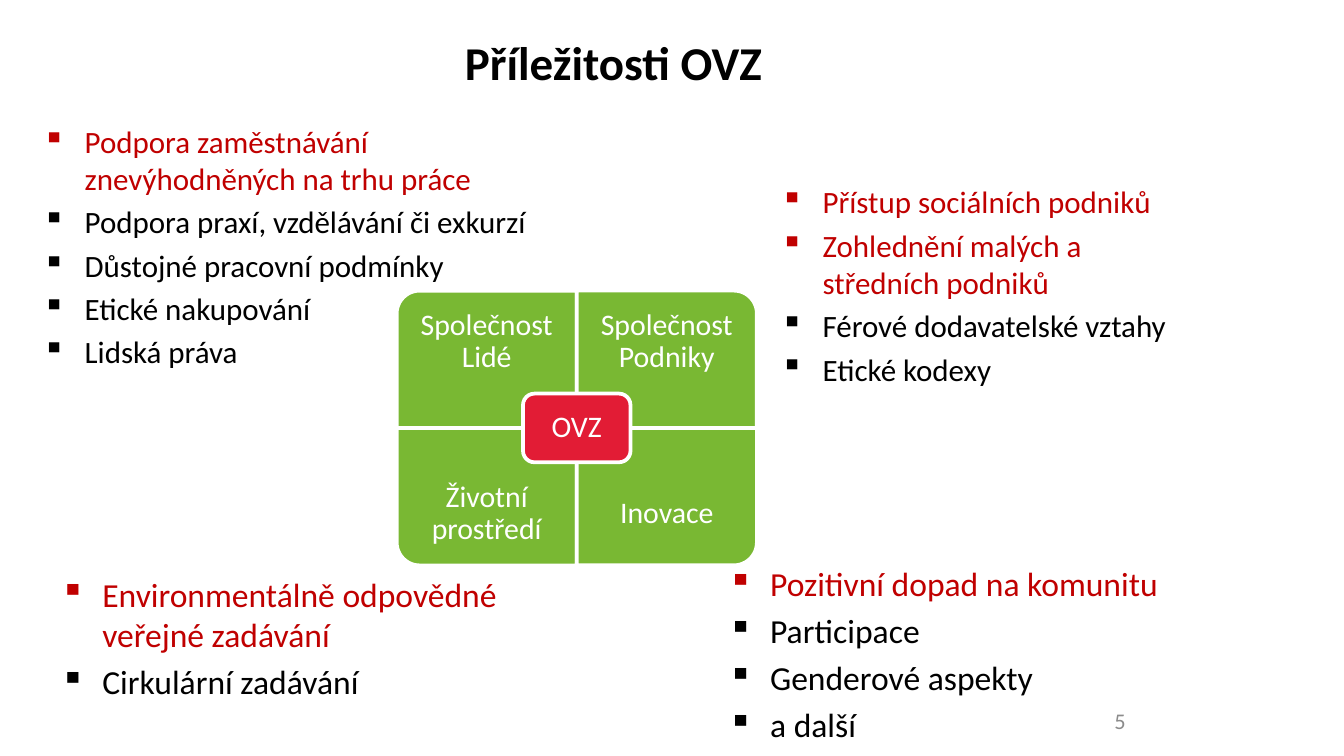
"""Build the slide on opportunities of responsible public procurement."""
import lxml.etree
import pptx
import pptx.dml.color
import pptx.enum.shapes
import pptx.enum.text
import pptx.oxml.ns
import pptx.util

Pt = pptx.util.Pt
RGB = pptx.dml.color.RGBColor
SHAPE = pptx.enum.shapes.MSO_SHAPE
ALIGN = pptx.enum.text.PP_ALIGN
ANCHOR = pptx.enum.text.MSO_ANCHOR

BLACK = RGB(0x00, 0x00, 0x00)
WHITE = RGB(0xFF, 0xFF, 0xFF)
GREY = RGB(0x8C, 0x8C, 0x8C)
DARK_RED = RGB(0xC0, 0x00, 0x00)
RED = RGB(0xE2, 0x1C, 0x35)
GREEN = RGB(0x79, 0xB8, 0x33)

CENTER_X, CENTER_Y = 309, 229.3
QUAD_W, QUAD_H = 96.5, 73.6
LABEL_H = 55.2
HUB_W, HUB_H = 57.6, 36.8

LISTS = [
    ((15.8, 61.9, 303.8, 153.4), 16.6, 1, [
        "Podpora zaměstnávání znevýhodněných na trhu práce",
        "Podpora praxí, vzdělávání či exkurzí",
        "Důstojné pracovní podmínky",
        "Etické nakupování",
        "Lidská práva"]),
    ((411.1, 94.3, 226.8, 147.6), 16.6, 2, [
        "Přístup sociálních podniků",
        "Zohlednění malých a středních podniků",
        "Férové dodavatelské vztahy",
        "Etické kodexy"]),
    ((25.2, 303.8, 295.9, 98.6), 18, 1, [
        "Environmentálně odpovědné veřejné zadávání",
        "Cirkulární zadávání"]),
    ((383, 298.1, 266.4, 98.6), 18, 1, [
        "Pozitivní dopad na komunitu",
        "Participace",
        "Genderové aspekty",
        "a další"]),
]

QUADRANTS = [
    ("Společnost Lidé", 0, 0, 270),
    ("Společnost Podniky", 1, 0, 0),
    ("Životní prostředí", 0, 1, 180),
    ("Inovace", 1, 1, 90),
]


def write(p, text, size=16, color=BLACK, bold=False, align=None, spacing=None):
    """Add one formatted run to a paragraph."""
    p.alignment = align
    p.line_spacing = spacing
    r = p.add_run()
    r.text = text
    r.font.name = "Calibri"
    r.font.size = Pt(size)
    r.font.bold = bold
    r.font.color.rgb = color


def add_bullet(p):
    """Give a paragraph a square bullet with a hanging indent."""
    pPr = p._p.get_or_add_pPr()
    pPr.set("marL", str(Pt(22.5)))
    pPr.set("indent", str(-Pt(22.5)))
    bullet = lxml.etree.SubElement(pPr, pptx.oxml.ns.qn("a:buChar"))
    bullet.set("char", "▪")


def add_box(shapes, box, anchor=ANCHOR.TOP, inset=None):
    """Add a wrapping text box and return its text frame."""
    tf = shapes.add_textbox(*map(Pt, box)).text_frame
    tf.word_wrap = True
    tf.vertical_anchor = anchor
    if inset is not None:
        tf.margin_left = tf.margin_right = Pt(inset)
        tf.margin_top = tf.margin_bottom = Pt(inset)
    return tf


def add_list(shapes, box, size, red_count, items):
    """Add a bulleted list whose first items are red."""
    tf = add_box(shapes, box)
    for i, item in enumerate(items):
        p = tf.add_paragraph() if i else tf.paragraphs[0]
        add_bullet(p)
        if i:
            p.space_before = Pt(size * 0.2)
        write(p, item, size=size, color=DARK_RED if i < red_count else BLACK)


def add_block(shapes, kind, box, fill, rotation=0):
    """Add a filled shape with a white outline."""
    sp = shapes.add_shape(kind, *map(Pt, box))
    sp.shadow.inherit = False
    sp.rotation = rotation
    sp.fill.solid()
    sp.fill.fore_color.rgb = fill
    sp.line.color.rgb = WHITE
    sp.line.width = Pt(2)


def add_label(shapes, text, box, inset):
    """Add a centred white label."""
    tf = add_box(shapes, box, ANCHOR.MIDDLE, inset)
    write(tf.paragraphs[0], text, color=WHITE, align=ALIGN.CENTER, spacing=0.9)


def add_quadrant(shapes, text, col, row, rotation):
    """Add one quarter of the matrix, its rounded corner facing outwards."""
    left = CENTER_X + (col - 1) * QUAD_W
    top = CENTER_Y + (row - 1) * QUAD_H
    w, h = (QUAD_H, QUAD_W) if rotation % 180 else (QUAD_W, QUAD_H)
    box = (left + (QUAD_W - w) / 2, top + (QUAD_H - h) / 2, w, h)
    add_block(shapes, SHAPE.ROUND_1_RECTANGLE, box, GREEN, rotation)
    label_top = top + row * (QUAD_H - LABEL_H)
    add_label(shapes, text, (left, label_top, QUAD_W, LABEL_H), 8.96)


def add_matrix(s):
    """Add the grouped four-part matrix with its hub."""
    shapes = s.shapes.add_group_shape().shapes
    for quadrant in QUADRANTS:
        add_quadrant(shapes, *quadrant)
    box = (CENTER_X - HUB_W / 2, CENTER_Y - HUB_H / 2, HUB_W, HUB_H)
    add_block(shapes, SHAPE.ROUNDED_RECTANGLE, box, RED)
    left, top, w, h = box
    add_label(shapes, "OVZ", (left + 1.8, top + 1.8, w - 3.6, h - 3.6), 4.8)


def add_title(s, text):
    """Place and format the title placeholder."""
    sp = s.shapes.title
    sp.left, sp.top, sp.width, sp.height = map(Pt, (42.5, 16.6, 572.4, 33.1))
    tf = sp.text_frame
    tf.auto_size = pptx.enum.text.MSO_AUTO_SIZE.NONE
    tf.vertical_anchor = ANCHOR.MIDDLE
    write(tf.paragraphs[0], text, size=25.2, bold=True, align=ALIGN.CENTER)


def main():
    """Build and save the presentation."""
    prs = pptx.Presentation()
    prs.slide_width, prs.slide_height = Pt(720), Pt(405)
    s = prs.slides.add_slide(prs.slide_layouts[5])
    add_title(s, "Příležitosti OVZ")
    add_matrix(s)
    for content in LISTS:
        add_list(s.shapes, *content)
    tf = add_box(s.shapes, (516.2, 375.1, 167.8, 21.6), ANCHOR.MIDDLE)
    write(tf.paragraphs[0], "5", size=12, color=GREY, align=ALIGN.CENTER)
    prs.save("out.pptx")


if __name__ == "__main__":
    main()
